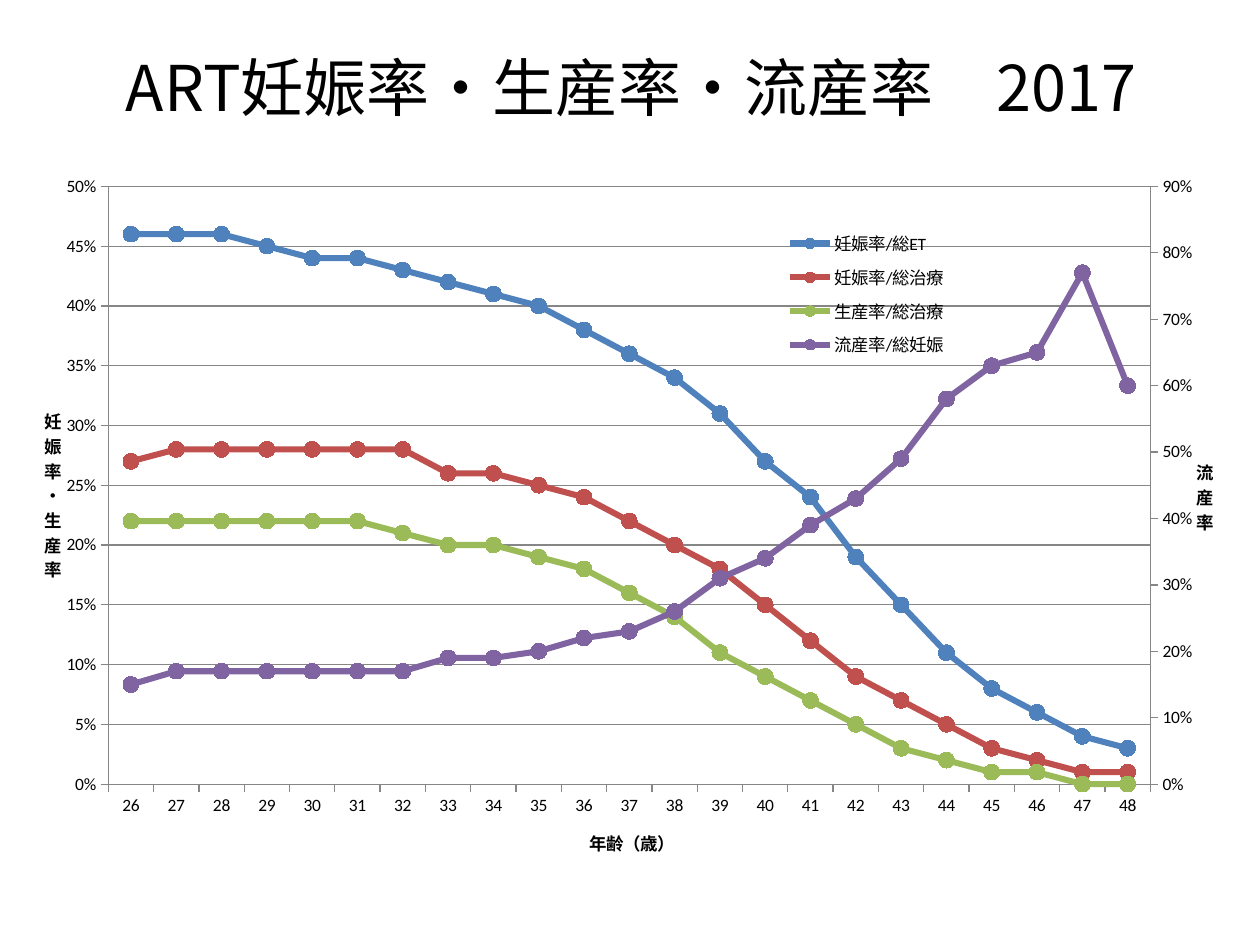
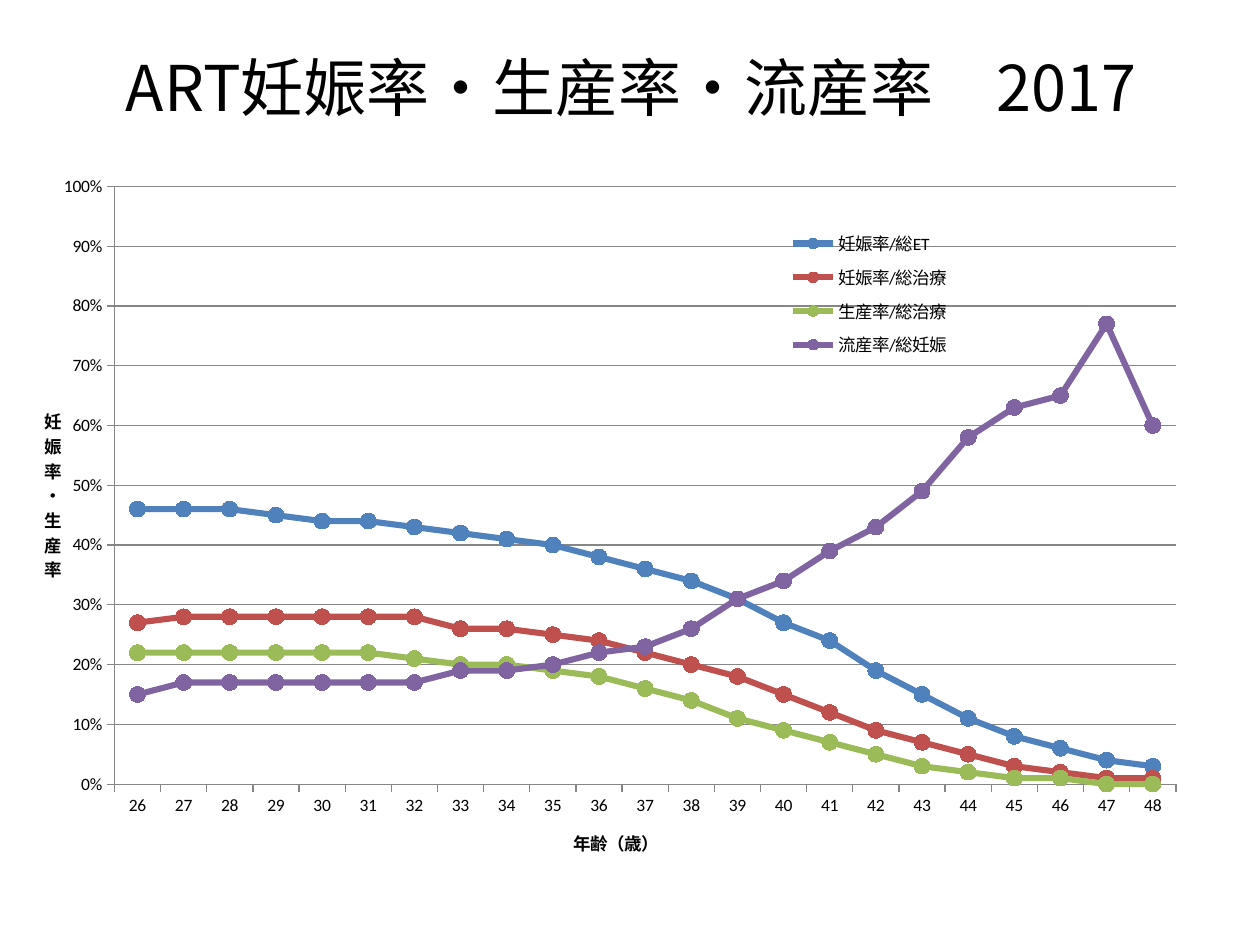
"""Build two slides charting ART pregnancy, live birth and miscarriage rates by age."""
from copy import deepcopy
from lxml.etree import SubElement
from pptx import Presentation
from pptx.chart.axis import ValueAxis
from pptx.chart.data import CategoryChartData
from pptx.dml.color import RGBColor
from pptx.enum.chart import XL_CHART_TYPE, XL_LEGEND_POSITION, XL_MARKER_STYLE, XL_TICK_MARK
from pptx.enum.text import MSO_ANCHOR, PP_ALIGN
from pptx.oxml import parse_xml
from pptx.oxml.ns import nsdecls, qn
from pptx.util import Inches, Pt

COLORS = {
    "text": "000000",
    "grid": "868686",
    "妊娠率/総ET": "4F81BD",
    "妊娠率/総治療": "C0504D",
    "生産率/総治療": "9BBB59",
    "流産率/総妊娠": "8064A2",
}
TITLE = "ART妊娠率・生産率・流産率　2017"
TITLE_FONT = "Noto Sans CJK JP"
AGES = [str(age) for age in range(26, 49)]
PERCENTAGES = {
    "妊娠率/総ET": [46, 46, 46, 45, 44, 44, 43, 42, 41, 40, 38, 36,
                 34, 31, 27, 24, 19, 15, 11, 8, 6, 4, 3],
    "妊娠率/総治療": [27, 28, 28, 28, 28, 28, 28, 26, 26, 25, 24, 22,
                20, 18, 15, 12, 9, 7, 5, 3, 2, 1, 1],
    "生産率/総治療": [22, 22, 22, 22, 22, 22, 21, 20, 20, 19, 18, 16,
                14, 11, 9, 7, 5, 3, 2, 1, 1, 0, 0],
    "流産率/総妊娠": [15, 17, 17, 17, 17, 17, 17, 19, 19, 20, 22, 23,
                26, 31, 34, 39, 43, 49, 58, 63, 65, 77, 60],
}
SCALES = [
    {"left_max": 0.5, "left_step": 0.05, "right_max": 0.9, "right_shown": True,
     "plot": (0.057, 0.033, 0.89, 0.87), "age_title_x": 0.465},
    {"left_max": 1, "left_step": 0.1, "right_max": 1, "right_shown": False,
     "plot": (0.062, 0.033, 0.903, 0.87), "age_title_x": 0.45},
]


def place(element, index, box, inner=False):
    """Give a chart element a manual layout in fractions of the chart."""
    for old_layout in element.findall(qn("c:layout")):
        element.remove(old_layout)
    layout = parse_xml(f"<c:layout {nsdecls('c')}><c:manualLayout/></c:layout>")
    settings = [("layoutTarget", "inner")] if inner else []
    settings += [("xMode", "edge"), ("yMode", "edge")]
    settings += zip("xywh", box)
    for tag, value in settings:
        SubElement(layout[0], qn(f"c:{tag}")).set("val", str(value))
    element.insert(index, layout)


def add_axis_title(axis, text, position, stacked):
    """Label an axis in bold, with upright stacked characters if asked."""
    frame = axis.axis_title.text_frame
    frame.text = text
    font = frame.paragraphs[0].runs[0].font
    font.size, font.bold = Pt(10), True
    font.color.rgb = RGBColor.from_string(COLORS["text"])
    title_element = axis.axis_title._element
    if stacked:
        body = title_element.find(".//" + qn("a:bodyPr"))
        body.set("rot", "0")
        body.set("vert", "wordArtVertRtl")
    place(title_element, 1, position)


prs = Presentation()
prs.slide_width, prs.slide_height = Inches(10), Inches(7.5)

for scale in SCALES:
    slide = prs.slides.add_slide(prs.slide_layouts[5])
    heading = slide.shapes.title
    heading.left, heading.top = Inches(0.51), Inches(0.23)
    heading.width, heading.height = Inches(9), Inches(0.91)
    heading.text_frame.text = TITLE
    heading.text_frame.vertical_anchor = MSO_ANCHOR.MIDDLE
    paragraph = heading.text_frame.paragraphs[0]
    paragraph.alignment = PP_ALIGN.CENTER
    font = paragraph.runs[0].font
    font.size, font.name = Pt(36), TITLE_FONT
    font.color.rgb = RGBColor.from_string(COLORS["text"])
    SubElement(font._element, qn("a:ea")).set("typeface", TITLE_FONT)

    rates = CategoryChartData(number_format="0%")
    rates.categories = AGES
    for name, percentages in PERCENTAGES.items():
        rates.add_series(name, [value / 100 for value in percentages])
    chart = slide.shapes.add_chart(
        XL_CHART_TYPE.LINE_MARKERS, Inches(0.33), Inches(1.3),
        Inches(9.33), Inches(5.53), rates).chart
    chart.has_title = False
    chart.font.size, chart.font.name = Pt(10), "Calibri"
    chart.font.color.rgb = RGBColor.from_string(COLORS["text"])
    chart.plots[0].vary_by_categories = False

    for series in chart.plots[0].series:
        color = RGBColor.from_string(COLORS[series.name])
        series.smooth = False
        series.format.line.width = Pt(3.5)
        series.format.line.color.rgb = color
        series.marker.style, series.marker.size = XL_MARKER_STYLE.CIRCLE, 9
        series.marker.format.fill.solid()
        series.marker.format.fill.fore_color.rgb = color
        series.marker.format.line.color.rgb = color

    chart.has_legend = True
    chart.legend.position = XL_LEGEND_POSITION.RIGHT
    chart.legend.include_in_layout = True
    chart.legend.font.size = Pt(10)
    place(chart.legend._element, 1, (0.63, 0.085, 0.15, 0.21))

    age_axis, left_axis = chart.category_axis, chart.value_axis
    left_axis.has_major_gridlines = True
    gridline = left_axis.major_gridlines.format.line
    for line in (age_axis.format.line, left_axis.format.line, gridline):
        line.width = Pt(0.75)
        line.color.rgb = RGBColor.from_string(COLORS["grid"])
    for axis in (age_axis, left_axis):
        axis.major_tick_mark = XL_TICK_MARK.OUTSIDE
        axis.minor_tick_mark = XL_TICK_MARK.NONE
    left_axis.tick_labels.number_format = "0%"
    left_axis.tick_labels.number_format_is_linked = False
    left_axis.minimum_scale = 0

    left_lines = chart.plots[0]._element
    plot_area = left_lines.getparent()
    right_lines = deepcopy(left_lines)
    for line_series in right_lines.findall(qn("c:ser"))[:-1]:
        right_lines.remove(line_series)
    left_lines.remove(left_lines.findall(qn("c:ser"))[-1])
    left_lines.addnext(right_lines)
    hidden_ages = deepcopy(age_axis._element)
    right_element = deepcopy(left_axis._element)
    left_axis._element.addnext(right_element)
    right_element.addnext(hidden_ages)
    for axis_id, new_id in zip(right_lines.findall(qn("c:axId")), ("5001", "5002")):
        axis_id.set("val", new_id)
    for element, own_id, crossing_id in ((hidden_ages, "5001", "5002"),
                                         (right_element, "5002", "5001")):
        element.find(qn("c:axId")).set("val", own_id)
        element.find(qn("c:crossAx")).set("val", crossing_id)
    hidden_ages.find(qn("c:delete")).set("val", "1")
    right_element.find(qn("c:axPos")).set("val", "r")
    right_element.find(qn("c:crosses")).set("val", "max")

    right_axis = ValueAxis(right_element)
    right_axis.has_major_gridlines = False
    right_axis.maximum_scale, right_axis.major_unit = scale["right_max"], 0.1
    right_axis.visible = scale["right_shown"]
    left_axis.maximum_scale = scale["left_max"]
    left_axis.major_unit = scale["left_step"]

    add_axis_title(age_axis, "年齢（歳）", (scale["age_title_x"], 0.963), False)
    add_axis_title(left_axis, "妊娠率・生産率", (0, 0.35), True)
    if scale["right_shown"]:
        add_axis_title(right_axis, "流産率", (0.984, 0.424), True)
    place(plot_area, 0, scale["plot"], inner=True)

prs.save("out.pptx")
